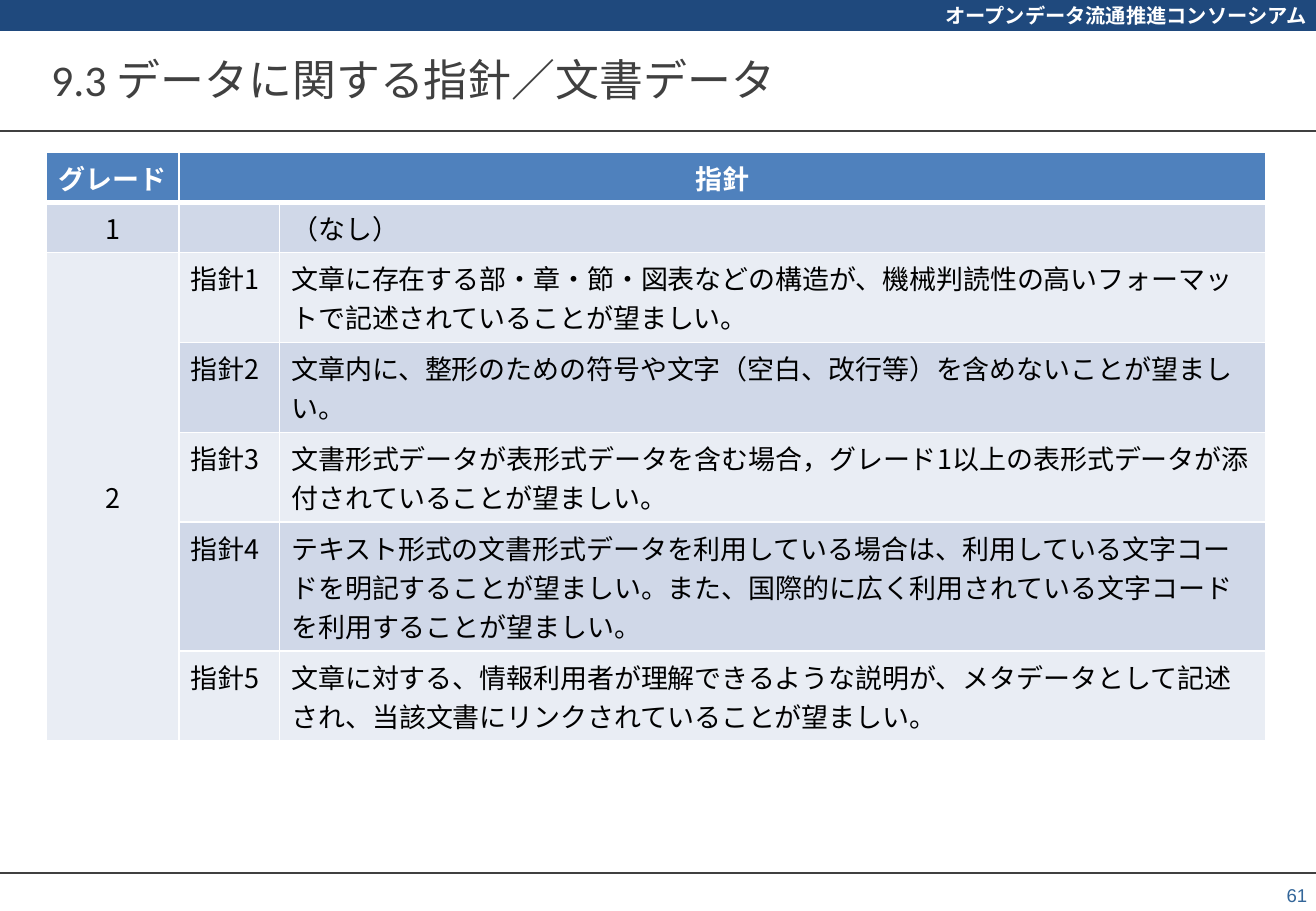
from pptx import Presentation
from pptx import util as u
from pptx.dml.color import RGBColor
from pptx.enum import shapes, text
from pptx.oxml import parse_xml
from pptx.oxml.ns import nsdecls
from lxml import etree

ORGANIZATION = "オープンデータ流通推進コンソーシアム"
TITLE = "9.3 データに関する指針／文書データ"
PAGE = "61"
HEADINGS = ("グレード", "指針", "")
GUIDELINES = [
    ("1", "", "（なし）"),
    ("2", "指針1", "文章に存在する部・章・節・図表などの構造が、機械判読性の高いフォーマットで記述されていることが望ましい。"),
    ("", "指針2", "文章内に、整形のための符号や文字（空白、改行等）を含めないことが望ましい。"),
    ("", "指針3", "文書形式データが表形式データを含む場合，グレード1以上の表形式データが添付されていることが望ましい。"),
    ("", "指針4", "テキスト形式の文書形式データを利用している場合は、利用している文字コードを明記することが望ましい。また、国際的に広く利用されている文字コードを利用することが望ましい。"),
    ("", "指針5", "文章に対する、情報利用者が理解できるような説明が、メタデータとして記述され、当該文書にリンクされていることが望ましい。"),
]
COLORS = {"navy": "1F497D", "gray": "404040", "page": "336699", "head": "4F81BD",
          "band": "D0D8E8", "pale": "E9EDF4", "white": "FFFFFF", "black": "000000"}
JAPANESE = "Noto Sans CJK JP"
WIDTH, HEIGHT = 27.51, 19.05
COLUMN_WIDTHS = (2.77, 2.1, 20.62)
ROW_HEIGHTS = (1.05, 1.05, 1.88, 1.88, 1.88, 2.69, 1.88)
RULES = (2.74, 18.26)
ALIGN, ANCHOR = text.PP_ALIGN, text.MSO_ANCHOR


def color(name):
    return RGBColor.from_string(COLORS[name])


def write(frame, words, size, ink, align, face=JAPANESE, bold=False):
    frame.word_wrap = True
    paragraph = frame.paragraphs[0]
    paragraph.text = words
    paragraph.alignment = align
    font = paragraph.font
    font.size, font.bold, font.name = u.Pt(size), bold, face
    font.color.rgb = color(ink)
    font._element.append(parse_xml(f'<a:ea {nsdecls("a")} typeface="{JAPANESE}"/>'))


def inset(frame, horizontal, vertical):
    frame.margin_left = frame.margin_right = u.Cm(horizontal)
    frame.margin_top = frame.margin_bottom = u.Cm(vertical)


def add_text(box, words, anchor, margins, **style):
    frame = slide.shapes.add_textbox(*map(u.Cm, box)).text_frame
    inset(frame, *margins)
    frame.vertical_anchor = anchor
    write(frame, words, **style)


def add_borders(cell, bottom):
    properties = cell._tc.get_or_add_tcPr()
    for index, (side, points) in enumerate((("L", 1), ("R", 1), ("T", 1), ("B", bottom))):
        properties.insert(index, parse_xml(
            f'<a:ln{side} {nsdecls("a")} w="{u.Pt(points)}"><a:solidFill>'
            f'<a:srgbClr val="{COLORS["white"]}"/></a:solidFill></a:ln{side}>'))


deck = Presentation()
deck.slide_width, deck.slide_height = u.Cm(WIDTH), u.Cm(HEIGHT)
slide = deck.slides.add_slide(deck.slide_layouts[6])

banner = slide.shapes.add_shape(shapes.MSO_SHAPE.RECTANGLE, 0, 0, u.Cm(WIDTH), u.Cm(0.64))
banner.shadow.inherit = False
banner.fill.solid()
banner.fill.fore_color.rgb = banner.line.color.rgb = color("navy")
banner.line.width = u.Pt(0.75)
inset(banner.text_frame, 0.19, 0.1)
banner.text_frame.vertical_anchor = ANCHOR.MIDDLE
write(banner.text_frame, ORGANIZATION, 12, "white", ALIGN.RIGHT, bold=True)

for y in RULES:
    rule = slide.shapes.add_connector(shapes.MSO_CONNECTOR.STRAIGHT, 0, u.Cm(y), u.Cm(WIDTH), u.Cm(y))
    rule.line.color.rgb = color("gray")
    rule.line.width = u.Pt(1)
    etree.SubElement(rule._element.spPr, "{http://schemas.openxmlformats.org/drawingml/2006/main}effectLst")

add_text((1.07, 0.84, 25.37, 1.63), TITLE, ANCHOR.MIDDLE, (0, 0),
         size=26, ink="gray", align=ALIGN.LEFT, face="Calibri")
add_text((26.38, 18.34, 1.14, 0.71), PAGE, ANCHOR.BOTTOM, (0.19, 0.1),
         size=11, ink="page", align=ALIGN.RIGHT, face="Arial")

rows = [HEADINGS] + GUIDELINES
grid = slide.shapes.add_table(len(rows), len(HEADINGS), u.Cm(0.97), u.Cm(3.18),
                              u.Cm(sum(COLUMN_WIDTHS)), u.Cm(sum(ROW_HEIGHTS))).table
for column, width in zip(grid.columns, COLUMN_WIDTHS):
    column.width = u.Cm(width)
for row, height in zip(grid.rows, ROW_HEIGHTS):
    row.height = u.Cm(height)

for r, row in enumerate(rows):
    header = r == 0
    fill = "head" if header else "band" if r % 2 else "pale"
    for c, words in enumerate(row):
        cell = grid.cell(r, c)
        cell.fill.solid()
        cell.fill.fore_color.rgb = color(fill)
        inset(cell, 0.25, 0.13)
        if c == 0 and not header:
            cell.vertical_anchor = ANCHOR.MIDDLE
        write(cell.text_frame, words, 16, "white" if header else "black",
              ALIGN.CENTER if header or c == 0 else ALIGN.LEFT, bold=header)
        add_borders(cell, 3 if header else 1)

grid.cell(0, 1).merge(grid.cell(0, 2))
grid.cell(2, 0).merge(grid.cell(len(rows) - 1, 0))

deck.save("out.pptx")
